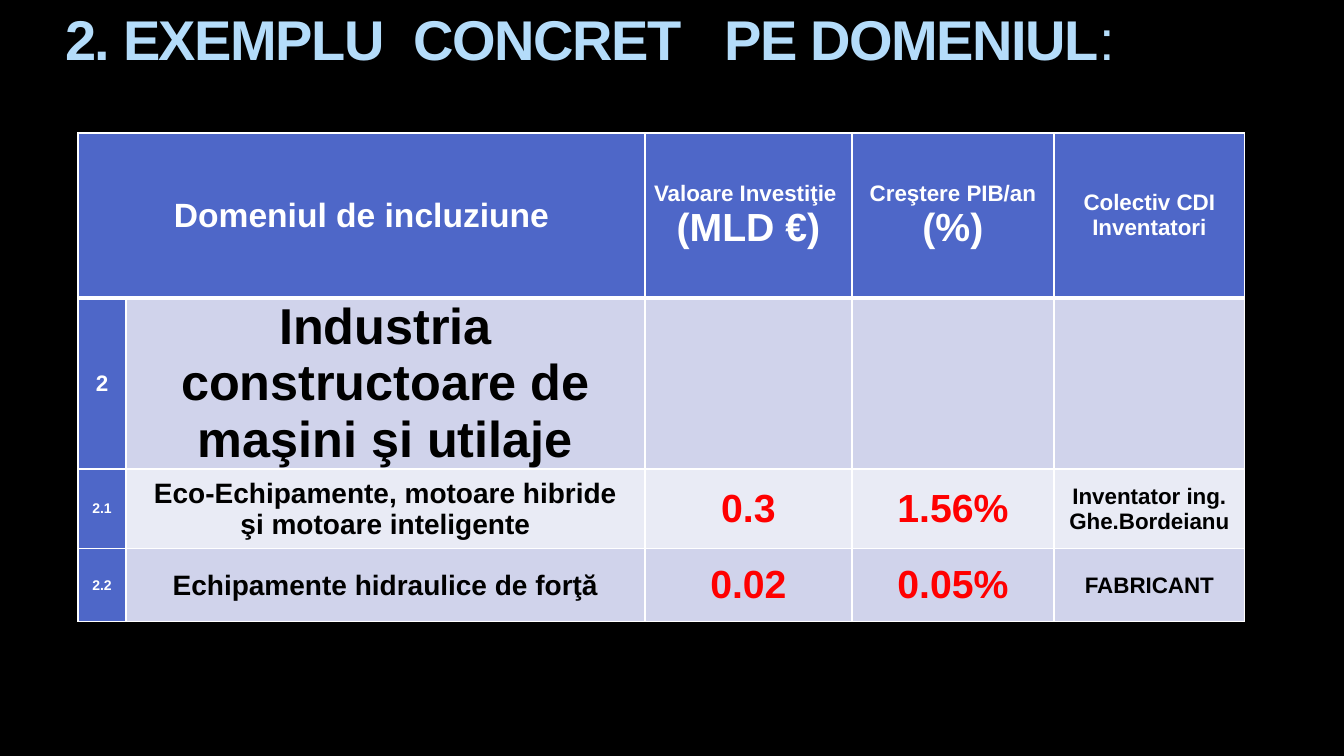
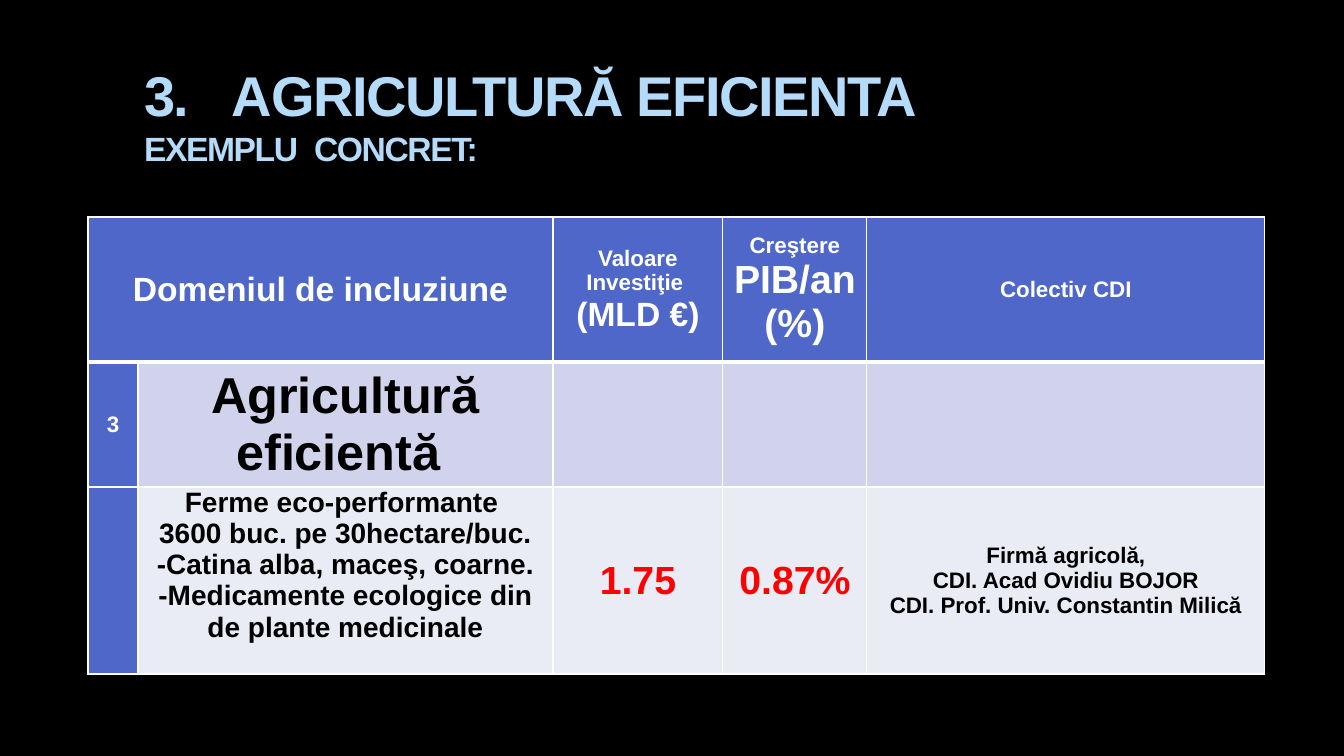
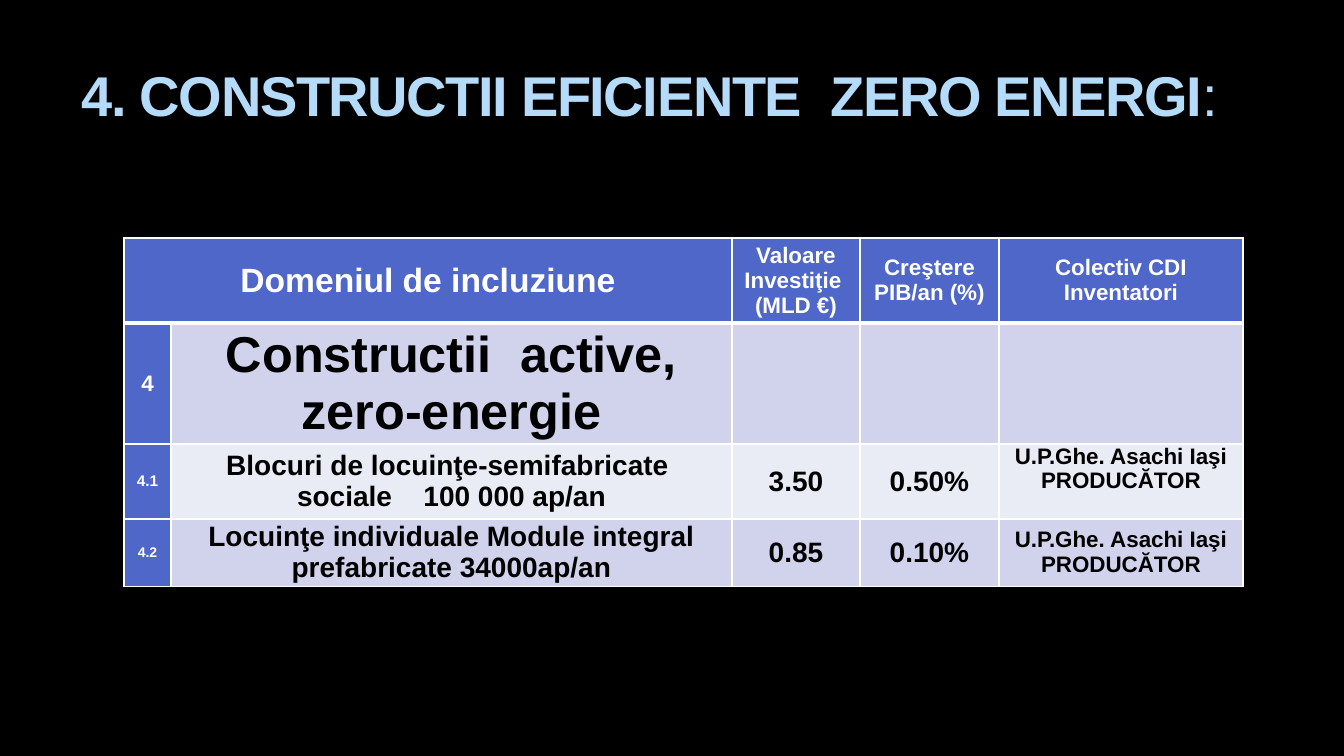
"""Build three slides of investment tables, one for each industrial domain."""
from dataclasses import dataclass
from itertools import accumulate

from lxml.etree import SubElement
from pptx import Presentation
from pptx.dml.color import RGBColor
from pptx.enum.text import MSO_ANCHOR as Anchor, PP_ALIGN as Align
from pptx.oxml.ns import qn
from pptx.slide import Slide
from pptx.table import _Cell as TableCell
from pptx.text.text import _Paragraph as Paragraph
from pptx.util import Emu, Pt

EMU_PER_PX = 914400 / 100.8
SLIDE_WIDTH, SLIDE_HEIGHT = 1344, 756
FONT = "Arial"
BLACK = RGBColor(0x00, 0x00, 0x00)
WHITE = RGBColor(0xFF, 0xFF, 0xFF)
RED = RGBColor(0xFF, 0x00, 0x00)
SKY = RGBColor(0xB4, 0xDC, 0xFA)
INDIGO = RGBColor(0x4E, 0x67, 0xC8)
LAVENDER = RGBColor(0xD0, 0xD3, 0xEB)
MIST = RGBColor(0xE9, 0xEB, 0xF5)
CELL_INSET = 7
TITLE_INSET_X, TITLE_INSET_Y = 10, 5
TITLE_TRACKING = -1.0
SPACE_RATIO = 0.28
THIN, THICK = 1, 3


@dataclass(frozen=True)
class Piece:
    text: str
    size: int
    bold: bool = True
    tracking: float = 0


Line = tuple[Piece, ...]


@dataclass(frozen=True)
class Entry:
    lines: tuple[Line, ...] = ()
    color: RGBColor = BLACK
    anchor: Anchor = Anchor.MIDDLE


@dataclass(frozen=True)
class Title:
    left: int
    top: int
    width: int
    height: int
    lines: tuple[Line, ...]


@dataclass(frozen=True)
class Grid:
    left: int
    top: int
    columns: tuple[int, ...]
    rows: tuple[int, ...]
    entries: tuple[tuple[Entry, ...], ...]


@dataclass(frozen=True)
class Domain:
    title: Title
    grid: Grid


def px(length: int) -> Emu:
    return Emu(round(length * EMU_PER_PX))


def gap(size: int, spaces: int, tracking: float = 0) -> Piece:
    extra = (spaces - 1) * (SPACE_RATIO * size + tracking)
    return Piece(" ", size, tracking=tracking + extra)


def heading(text: str, size: int = 40, bold: bool = True) -> Piece:
    return Piece(text, size, bold, TITLE_TRACKING)


def heading_gap(spaces: int, size: int = 40) -> Piece:
    return gap(size, spaces, TITLE_TRACKING)


def entry(size: int, *texts: str, color: RGBColor = BLACK,
          anchor: Anchor = Anchor.MIDDLE) -> Entry:
    return Entry(tuple((Piece(text, size),) for text in texts), color, anchor)


def figure(text: str) -> Entry:
    return entry(28, text, color=RED)


def domain_row(number: str, name: Entry) -> tuple[Entry, ...]:
    return entry(16, number), name, Entry(), Entry(), Entry()


def write_line(paragraph: Paragraph, line: Line, color: RGBColor) -> None:
    for piece in line:
        run = paragraph.add_run()
        run.text = piece.text
        run.font.name = FONT
        run.font.size = Pt(piece.size)
        run.font.bold = piece.bold
        run.font.color.rgb = color
        if piece.tracking:
            run._r.get_or_add_rPr().set("spc", str(round(piece.tracking * 100)))


def draw_title(slide: Slide, title: Title) -> None:
    box = slide.shapes.add_textbox(
        px(title.left), px(title.top), px(title.width), px(title.height))
    frame = box.text_frame
    frame.word_wrap = True
    frame.vertical_anchor = Anchor.TOP
    frame.margin_left = frame.margin_right = px(TITLE_INSET_X)
    frame.margin_top = frame.margin_bottom = px(TITLE_INSET_Y)
    for index, line in enumerate(title.lines):
        paragraph = frame.add_paragraph() if index else frame.paragraphs[0]
        write_line(paragraph, line, SKY)


def draw_borders(cell: TableCell, row: int) -> None:
    widths = {"a:lnL": THIN, "a:lnR": THIN,
              "a:lnT": THICK if row == 1 else THIN,
              "a:lnB": THICK if row == 0 else THIN}
    properties = cell._tc.get_or_add_tcPr()
    for side, width in widths.items():
        border = SubElement(properties, qn(side), w=str(Pt(width)))
        fill = SubElement(border, qn("a:solidFill"))
        SubElement(fill, qn("a:srgbClr"), val=str(WHITE))


def fill_cell(cell: TableCell, content: Entry, row: int, column: int) -> None:
    accented = row == 0 or column == 0
    draw_borders(cell, row)
    cell.fill.solid()
    cell.fill.fore_color.rgb = INDIGO if accented else LAVENDER if row % 2 else MIST
    cell.margin_left = cell.margin_right = px(CELL_INSET)
    cell.margin_top = cell.margin_bottom = 0
    cell.vertical_anchor = content.anchor
    frame = cell.text_frame
    for index, line in enumerate(content.lines):
        paragraph = frame.add_paragraph() if index else frame.paragraphs[0]
        paragraph.alignment = Align.CENTER
        write_line(paragraph, line, WHITE if accented else content.color)


def draw_grid(slide: Slide, grid: Grid) -> None:
    table = slide.shapes.add_table(
        len(grid.rows), len(grid.columns), px(grid.left), px(grid.top),
        px(sum(grid.columns)), px(sum(grid.rows))).table
    table.horz_banding = False
    table.first_row = False
    for column, width in zip(table.columns, grid.columns):
        column.width = px(width)
    for row, height in zip(table.rows, grid.rows):
        row.height = px(height)
    for row, entries in enumerate(grid.entries):
        for column, content in enumerate(entries):
            fill_cell(table.cell(row, column), content, row, column)
    table.cell(0, 0).merge(table.cell(0, 1))


INCLUSION = (entry(24, "Domeniul de incluziune"), Entry())
INVESTMENT = Piece("Valoare Investiţie ", 16)
INVENTORS = entry(16, "Colectiv CDI Inventatori")
UNIVERSITY = ("U.P.Ghe. Asachi Iaşi", "PRODUCĂTOR")

DOMAINS = (
    Domain(
        Title(55, 0, 1209, 124, ((
            heading("2. EXEMPLU"), heading_gap(2), heading("CONCRET"),
            heading_gap(3), heading("PE DOMENIUL"), heading(":", bold=False)),)),
        Grid(78, 133, (48, 519, 207, 202, 191), (165, 171, 80, 73), (
            (*INCLUSION,
             Entry(((INVESTMENT,), (Piece("(MLD €)", 28),))),
             Entry(((Piece("Creştere PIB/an ", 16), Piece("(%)", 28)),)),
             INVENTORS),
            domain_row("2", entry(36, "Industria constructoare de maşini şi utilaje")),
            (entry(10, "2.1"),
             entry(20, "Eco-Echipamente, motoare hibride", "şi motoare inteligente"),
             figure("0.3"), figure("1.56%"),
             entry(16, "Inventator ing.", "Ghe.Bordeianu")),
            (entry(10, "2.2"), entry(20, "Echipamente hidraulice de forţă"),
             figure("0.02"), figure("0.05%"), entry(16, "FABRICANT")),
        ))),
    Domain(
        Title(134, 56, 1142, 139, (
            (heading("3."), heading_gap(3), heading("AGRICULTURĂ EFICIENTA")),
            (heading("EXEMPLU", 24), heading_gap(2, 24), heading("CONCRET:", 24)))),
        Grid(88, 217, (50, 415, 170, 144, 398), (145, 125, 187), (
            (*INCLUSION,
             Entry(((INVESTMENT,), (Piece("(MLD €)", 24),))),
             Entry(((Piece("Creştere ", 16), Piece("PIB/an (%)", 28)),)),
             entry(16, "Colectiv CDI")),
            domain_row("3", entry(36, "Agricultură eficientă ")),
            (Entry(),
             entry(20, "Ferme eco-performante ", "3600 buc. pe 30hectare/buc.",
                   "-Catina alba, maceş, coarne.",
                   "-Medicamente ecologice din de plante medicinale",
                   anchor=Anchor.TOP),
             figure("1.75"), figure("0.87%"),
             entry(16, "Firmă agricolă,", "CDI. Acad Ovidiu BOJOR",
                   "CDI. Prof. Univ. Constantin Milică")),
        ))),
    Domain(
        Title(72, 56, 1205, 101, ((
            heading("4. CONSTRUCTII EFICIENTE"), heading_gap(2),
            heading("ZERO ENERGI"), heading(":", bold=False)),)),
        Grid(124, 238, (47, 561, 128, 139, 244), (85, 113, 75, 63), (
            (*INCLUSION,
             Entry(((INVESTMENT,), (Piece("(MLD €)", 16),))),
             entry(16, "Creştere PIB/an (%)"), INVENTORS),
            domain_row("4", Entry((
                (Piece("Constructii", 36), gap(36, 2), Piece("active,", 36)),
                (Piece("zero-energie", 36),)))),
            (entry(11, "4.1"),
             Entry(((Piece("Blocuri de locuinţe-semifabricate ", 20),),
                    (Piece("sociale", 20), gap(20, 4), Piece("100 000 ap/an", 20)))),
             entry(20, "3.50"), entry(20, "0.50%"),
             entry(16, *UNIVERSITY, anchor=Anchor.TOP)),
            (entry(10, "4.2"),
             entry(20, "Locuinţe individuale Module integral prefabricate 34000ap/an"),
             entry(20, "0.85"), entry(20, "0.10%"), entry(16, *UNIVERSITY)),
        ))),
)


def main() -> None:
    deck = Presentation()
    deck.slide_width, deck.slide_height = px(SLIDE_WIDTH), px(SLIDE_HEIGHT)
    for domain in DOMAINS:
        slide = deck.slides.add_slide(deck.slide_layouts[6])
        slide.background.fill.solid()
        slide.background.fill.fore_color.rgb = BLACK
        draw_grid(slide, domain.grid)
        draw_title(slide, domain.title)
    deck.save("out.pptx")


if __name__ == "__main__":
    main()
